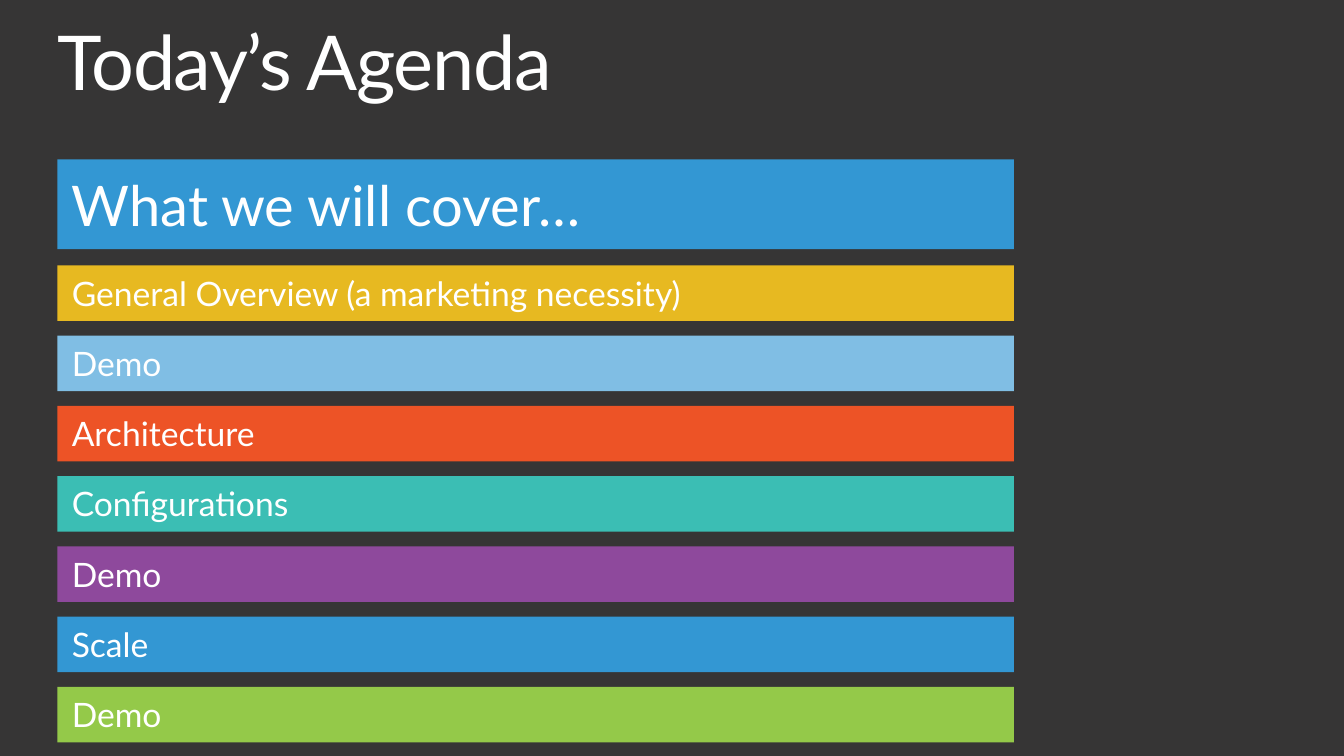
import pptx
import pptx.util
import pptx.dml.color
import pptx.enum.shapes
import pptx.enum.text

Cm = pptx.util.Cm
Pt = pptx.util.Pt

COLORS = {
    "background": "363535",
    "text": "FFFFFF",
    "blue": "3397D3",
    "yellow": "E7B921",
    "sky": "80BEE4",
    "orange": "ED5326",
    "teal": "3BBEB4",
    "purple": "8E499C",
    "green": "94C949",
}

AGENDA = [
    ("General Overview (a marketing necessity)", "yellow"),
    ("Demo", "sky"),
    ("Architecture", "orange"),
    ("Configurations", "teal"),
    ("Demo", "purple"),
    ("Scale", "blue"),
    ("Demo", "green"),
]

BAR_LEFT, BAR_WIDTH = 1.45, 24.1
LABEL_LEFT = 1.81
FIRST_BAR_TOP, BAR_HEIGHT, BAR_PITCH = 6.69, 1.4, 1.77


def rgb(name):
    return pptx.dml.color.RGBColor.from_string(COLORS[name])


def write_text(para, text, size, font, color="text", tracking=None, line_spacing=None):
    """Add one formatted span to a paragraph."""
    span = para.add_run()
    span.text = text
    span.font.name = font
    span.font.size = Pt(size)
    span.font.color.rgb = rgb(color)
    if tracking is not None:
        span.font._element.set("spc", str(round(tracking * 100)))
    if line_spacing is not None:
        para.line_spacing = line_spacing


class AgendaPage:
    """Holds the style and the current slide."""

    def __init__(self, page, font="Lato"):
        self.page = page
        self.font = font

    def background(self, color):
        fill = self.page.background.fill
        fill.solid()
        fill.fore_color.rgb = rgb(color)

    def bar(self, top, height, color):
        bar = self.page.shapes.add_shape(
            pptx.enum.shapes.MSO_SHAPE.RECTANGLE,
            Cm(BAR_LEFT), Cm(top), Cm(BAR_WIDTH), Cm(height))
        bar.shadow.inherit = False
        bar.fill.solid()
        bar.fill.fore_color.rgb = rgb(color)
        bar.line.fill.background()

    def label(self, text, left, top, width, height, **text_format):
        box = self.page.shapes.add_textbox(Cm(left), Cm(top), Cm(width), Cm(height))
        frame = box.text_frame
        frame.word_wrap = True
        frame.auto_size = pptx.enum.text.MSO_AUTO_SIZE.SHAPE_TO_FIT_TEXT
        frame.margin_left = frame.margin_right = 0
        frame.margin_top = frame.margin_bottom = 0
        write_text(frame.paragraphs[0], text, font=self.font, **text_format)


def main():
    deck = pptx.Presentation()
    deck.slide_width, deck.slide_height = Cm(33.87), Cm(19.05)
    agenda = AgendaPage(deck.slides.add_slide(deck.slide_layouts[6]))
    agenda.background("background")

    # Title
    agenda.label("Today’s Agenda", BAR_LEFT, 0.64, 30.96, 1.85,
                 size=54, tracking=-1, line_spacing=0.9)

    # Heading bar
    agenda.bar(4.02, 2.26, "blue")
    agenda.label("What we will cover…", LABEL_LEFT, 4.3, 16.4, 1.7, size=40)

    # Agenda bars
    for index, (topic, color) in enumerate(AGENDA):
        top = FIRST_BAR_TOP + index * BAR_PITCH
        agenda.bar(top, BAR_HEIGHT, color)
        agenda.label(topic, LABEL_LEFT, top + 0.18, 22.07, 1.02, size=24)

    deck.save("out.pptx")


if __name__ == "__main__":
    main()
